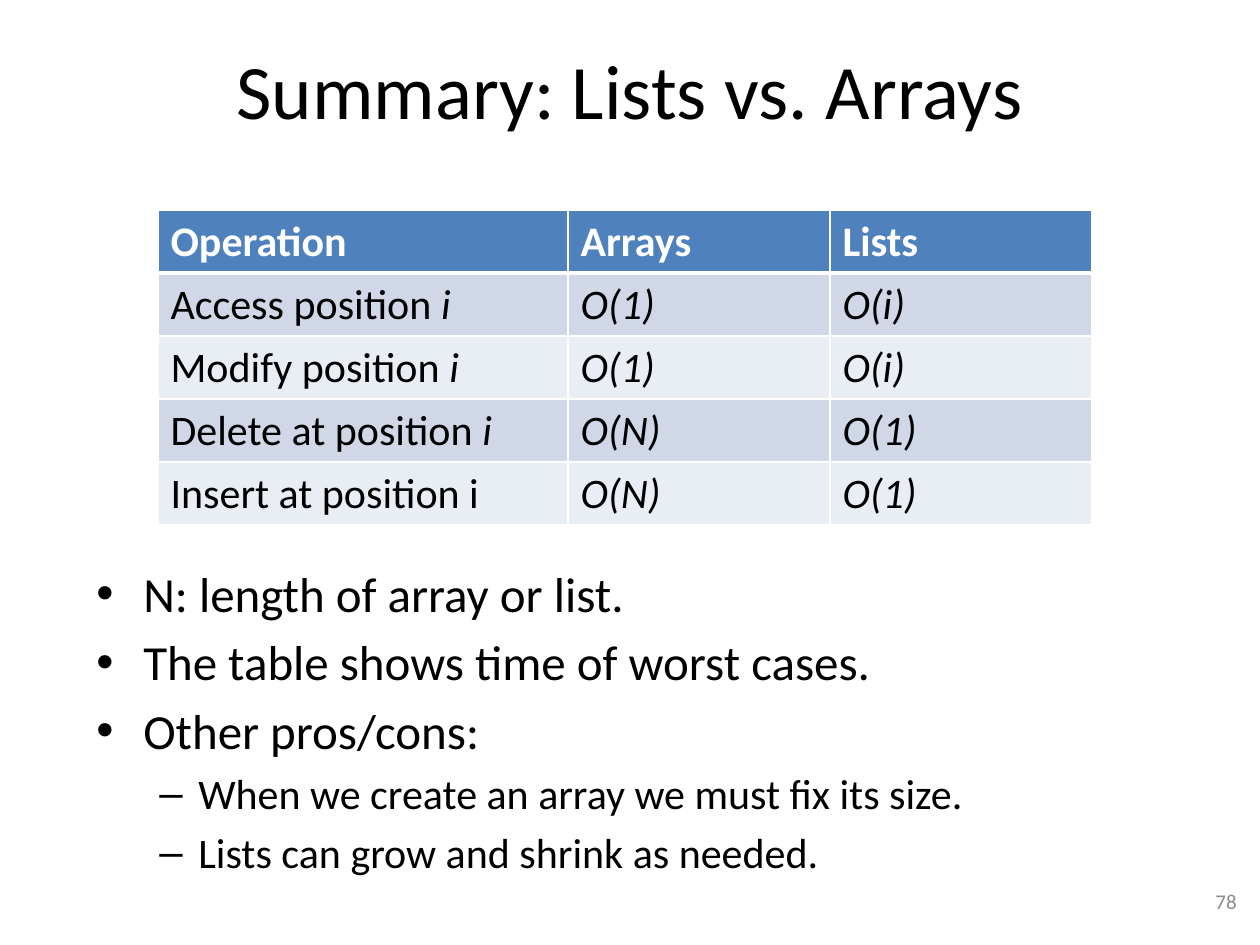
"""Build a slide that compares the running times of lists and arrays."""
from dataclasses import dataclass

from lxml import etree
from pptx import Presentation
from pptx.dml.color import RGBColor
from pptx.enum.text import MSO_ANCHOR, PP_ALIGN
from pptx.oxml.ns import qn
from pptx.util import Emu, Pt

CENTER, LEFT, RIGHT = PP_ALIGN.CENTER, PP_ALIGN.LEFT, PP_ALIGN.RIGHT
TOP, MIDDLE = MSO_ANCHOR.TOP, MSO_ANCHOR.MIDDLE
EMU_PER_PX = 914400 / 126
TITLE_ONLY = 5


@dataclass(frozen=True)
class Theme:
    """Colours, font and type sizes of the deck."""
    font: str = "Calibri"
    ink: str = "000000"
    white: str = "FFFFFF"
    muted: str = "8C8C8C"
    header: str = "4F81BD"
    bands: tuple = ("D0D8E8", "E9EDF4")
    title_size: int = 44
    bullet_sizes: tuple = (28, 24)
    table_size: int = 24
    number_size: int = 12


@dataclass(frozen=True)
class Bullet:
    """Mark, left margin and hanging indent of one list level."""
    mark: str
    margin: int
    hang: int


BULLETS = (Bullet("•", 47, 47), Bullet("–", 102, 39))


def px(length):
    """Turn whole pixels into EMU."""
    return Emu(round(length * EMU_PER_PX))


def write(para, text, *, font, size, color, bold=False, italic=False):
    """Add a formatted span to a paragraph."""
    span = para.add_run()
    span.text = text
    span.font.name = font
    span.font.size = Pt(size)
    span.font.color.rgb = RGBColor.from_string(color)
    span.font.bold = bold
    span.font.italic = italic


def set_bullet(para, bullet):
    """Give a paragraph its mark and hanging indent."""
    properties = para._p.get_or_add_pPr()
    properties.set("marL", str(px(bullet.margin)))
    properties.set("indent", str(-px(bullet.hang)))
    etree.SubElement(properties, qn("a:buFont"), typeface="Arial")
    etree.SubElement(properties, qn("a:buChar"), char=bullet.mark)


def set_borders(cell, color, bottom):
    """Draw the four borders of a cell, with its own bottom width."""
    properties = cell._tc.get_or_add_tcPr()
    for side, width in (("lnL", 1), ("lnR", 1), ("lnT", 1), ("lnB", bottom)):
        line = etree.SubElement(properties, qn(f"a:{side}"), w=str(Pt(width)))
        fill = etree.SubElement(line, qn("a:solidFill"))
        etree.SubElement(fill, qn("a:srgbClr"), val=color)


class SlideBuilder:
    """Holds the theme and the current slide."""

    def __init__(self, deck, theme):
        """Start a title-only slide."""
        self.theme = theme
        self.slide = deck.slides.add_slide(deck.slide_layouts[TITLE_ONLY])

    def title(self, text, left, top, width, height):
        """Place and fill the title placeholder."""
        box = self.slide.shapes.title
        box.left, box.top, box.width, box.height = map(px, (left, top, width, height))
        box.text_frame.vertical_anchor = MIDDLE
        para = box.text_frame.paragraphs[0]
        para.alignment = CENTER
        write(para, text, font=self.theme.font, size=self.theme.title_size,
              color=self.theme.ink)

    def text_frame(self, left, top, width, height, anchor):
        """Add a wrapping text box and return its frame."""
        box = self.slide.shapes.add_textbox(*map(px, (left, top, width, height)))
        box.text_frame.word_wrap = True
        box.text_frame.vertical_anchor = anchor
        return box.text_frame

    def bullets(self, items, left, top, width, height):
        """Add a list of (level, text) items."""
        frame = self.text_frame(left, top, width, height, TOP)
        for index, (level, text) in enumerate(items):
            para = frame.add_paragraph() if index else frame.paragraphs[0]
            size = self.theme.bullet_sizes[level]
            para.level = level
            para.alignment = LEFT
            para.space_before = Pt(size * 0.2)
            set_bullet(para, BULLETS[level])
            write(para, text, font=self.theme.font, size=size, color=self.theme.ink)

    def number(self, text, left, top, width, height):
        """Add the slide number."""
        para = self.text_frame(left, top, width, height, MIDDLE).paragraphs[0]
        para.alignment = RIGHT
        write(para, text, font=self.theme.font, size=self.theme.number_size,
              color=self.theme.muted)

    def table(self, header, rows, left, top, widths, row_height):
        """Add a banded table whose cells are lists of (text, italic) spans."""
        theme = self.theme
        cells = [[[(name, False)] for name in header], *rows]
        frame = self.slide.shapes.add_table(
            len(cells), len(widths), px(left), px(top),
            px(sum(widths)), px(row_height * len(cells)))
        grid = frame.table
        for column, width in zip(grid.columns, widths):
            column.width = px(width)
        for row, line in enumerate(cells):
            is_header = row == 0
            fill = theme.header if is_header else theme.bands[(row - 1) % 2]
            for column, spans in enumerate(line):
                cell = grid.cell(row, column)
                set_borders(cell, theme.white, 3 if is_header else 1)
                cell.fill.solid()
                cell.fill.fore_color.rgb = RGBColor.from_string(fill)
                for text, italic in spans:
                    write(cell.text_frame.paragraphs[0], text, font=theme.font,
                          size=theme.table_size, bold=is_header, italic=italic,
                          color=theme.white if is_header else theme.ink)


def main():
    """Build and save the deck."""
    deck = Presentation()
    deck.slide_width, deck.slide_height = px(1260), px(945)
    page = SlideBuilder(deck, Theme())
    page.title("Summary: Lists vs. Arrays", 63, 10, 1134, 158)
    page.bullets([
        (0, "N: length of array or list."),
        (0, "The table shows time of worst cases."),
        (0, "Other pros/cons:"),
        (1, "When we create an array we must fix its size."),
        (1, "Lists can grow and shrink as needed."),
    ], 84, 557, 1134, 136)
    page.number("78", 955, 876, 294, 50)

    operations = [
        ([("Access position ", False), ("i", True)], "O(1)", "O(i)"),
        ([("Modify position ", False), ("i", True)], "O(1)", "O(i)"),
        ([("Delete at position ", False), ("i", True)], "O(N)", "O(1)"),
        ([("Insert at position i", False)], "O(N)", "O(1)"),
    ]
    rows = [[name, [(arrays, True)], [(lists, True)]]
            for name, arrays, lists in operations]
    page.table(("Operation", "Arrays", "Lists"), rows, 158, 210, (410, 262, 262), 63)
    deck.save("out.pptx")


if __name__ == "__main__":
    main()
